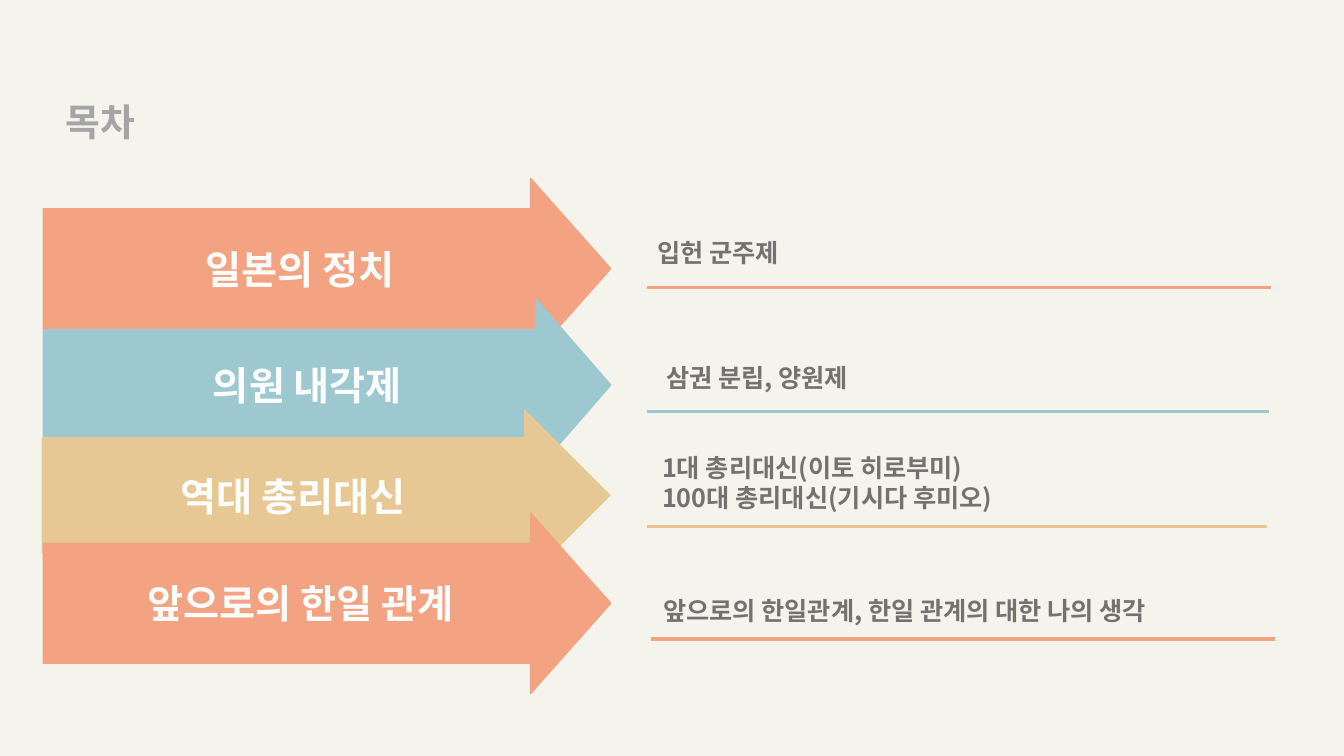
from dataclasses import dataclass

from lxml import etree
from pptx import Presentation
from pptx.dml.color import RGBColor
from pptx.enum.shapes import MSO_CONNECTOR, MSO_SHAPE
from pptx.enum.text import MSO_ANCHOR, PP_ALIGN
from pptx.oxml.ns import qn
from pptx.slide import Slide
from pptx.text.text import TextFrame
from pptx.util import Pt

ARROW = MSO_SHAPE.RIGHT_ARROW
STRAIGHT = MSO_CONNECTOR.STRAIGHT
LEFT, CENTER = PP_ALIGN.LEFT, PP_ALIGN.CENTER
TOP, MIDDLE = MSO_ANCHOR.TOP, MSO_ANCHOR.MIDDLE


@dataclass(frozen=True)
class Theme:
    font: str = "Noto Sans CJK KR"
    paper: str = "F4F4EC"
    coral: str = "F3A382"
    teal: str = "9DC8CF"
    sand: str = "E7C794"
    white: str = "FFFFFF"
    dark: str = "767171"
    grey: str = "A5A5A5"
    title: float = 27
    label: float = 28
    note: float = 18
    edge: float = 1
    rule: float = 2.25


@dataclass(frozen=True)
class Box:
    left: float
    top: float
    width: float
    height: float

    def lengths(self) -> list[Pt]:
        return [Pt(n) for n in (self.left, self.top, self.width, self.height)]


@dataclass(frozen=True)
class Topic:
    label: str
    color: str
    arrow: Box
    shaft: float
    head: float
    notes: tuple[str, ...]
    area: Box
    rule: tuple[float, float, float]  # left, right, height on the slide
    space: float = 1


THEME = Theme()
WIDE = 405.36
TITLE = Box(39.6, 66.96, 388.08, 39.6)
TOPICS = (
    Topic("일본의 정치", THEME.coral, Box(30.96, 127.44, WIDE, 128.88),
          0.664, 0.444, ("입헌 군주제",),
          Box(462.24, 155.52, 426.96, 38.88), (462.24, 907.92, 205.6), 1.5),
    Topic(" 의원 내각제", THEME.teal, Box(30.96, 213.84, WIDE, 122.4),
          0.644, 0.435, ("삼권 분립, 양원제",),
          Box(468.72, 255.6, 410.4, 28.8), (462.24, 906.48, 293.76)),
    Topic("역대 총리대신 ", THEME.sand, Box(30.24, 293.04, WIDE, 121.68),
          0.676, 0.5,
          ("1대 총리대신(이토 히로부미)", "100대 총리대신(기시다 후미오)"),
          Box(465.84, 319.68, 411.84, 50.4), (462.24, 905.04, 375.84)),
    Topic("앞으로의 한일 관계", THEME.coral, Box(30.96, 366.48, WIDE, 128.88),
          0.664, 0.444, ("앞으로의 한일관계, 한일 관계의 대한 나의 생각",),
          Box(466.56, 421.92, 419.76, 28.8), (465.12, 910.8, 456.48)),
)


def write(frame: TextFrame, lines: tuple[str, ...], size: float, color: str,
          align: PP_ALIGN = LEFT, anchor: MSO_ANCHOR = TOP,
          space: float = 1) -> None:
    frame.word_wrap = True
    frame.vertical_anchor = anchor
    style = {"name": THEME.font, "size": Pt(size), "bold": True}
    for i, line in enumerate(lines):
        para = frame.add_paragraph() if i else frame.paragraphs[0]
        para.alignment = align
        para.line_spacing = space
        run = para.add_run()
        run.text = line
        for key, value in style.items():
            setattr(run.font, key, value)
        run.font.color.rgb = RGBColor.from_string(color)
        # Korean glyphs take the East Asian typeface.
        east = etree.SubElement(run.font._element, qn("a:ea"))
        east.set("typeface", THEME.font)


def add_text(slide: Slide, box: Box, lines: tuple[str, ...], size: float,
             color: str, space: float = 1) -> None:
    shape = slide.shapes.add_textbox(*box.lengths())
    write(shape.text_frame, lines, size, color, space=space)


def add_arrow(slide: Slide, topic: Topic) -> None:
    shape = slide.shapes.add_shape(ARROW, *topic.arrow.lengths())
    shape.shadow.inherit = False
    shape.adjustments[0] = topic.shaft
    shape.adjustments[1] = topic.head
    color = RGBColor.from_string(topic.color)
    shape.fill.solid()
    shape.fill.fore_color.rgb = color
    shape.line.color.rgb = color
    shape.line.width = Pt(THEME.edge)
    write(shape.text_frame, (topic.label,), THEME.label, THEME.white,
          CENTER, MIDDLE)


def add_rule(slide: Slide, topic: Topic) -> None:
    left, right, level = (Pt(n) for n in topic.rule)
    rule = slide.shapes.add_connector(STRAIGHT, left, level, right, level)
    rule.line.color.rgb = RGBColor.from_string(topic.color)
    rule.line.width = Pt(THEME.rule)
    etree.SubElement(rule._element.spPr, qn("a:effectLst"))


def main() -> None:
    deck = Presentation()
    deck.slide_width, deck.slide_height = Pt(960), Pt(540)
    slide = deck.slides.add_slide(deck.slide_layouts[6])
    fill = slide.background.fill
    fill.solid()
    fill.fore_color.rgb = RGBColor.from_string(THEME.paper)

    add_text(slide, TITLE, ("목차",), THEME.title, THEME.grey)
    for topic in TOPICS:
        add_arrow(slide, topic)
        add_rule(slide, topic)
        add_text(slide, topic.area, topic.notes, THEME.note, THEME.dark,
                 topic.space)
    deck.save("out.pptx")


if __name__ == "__main__":
    main()
